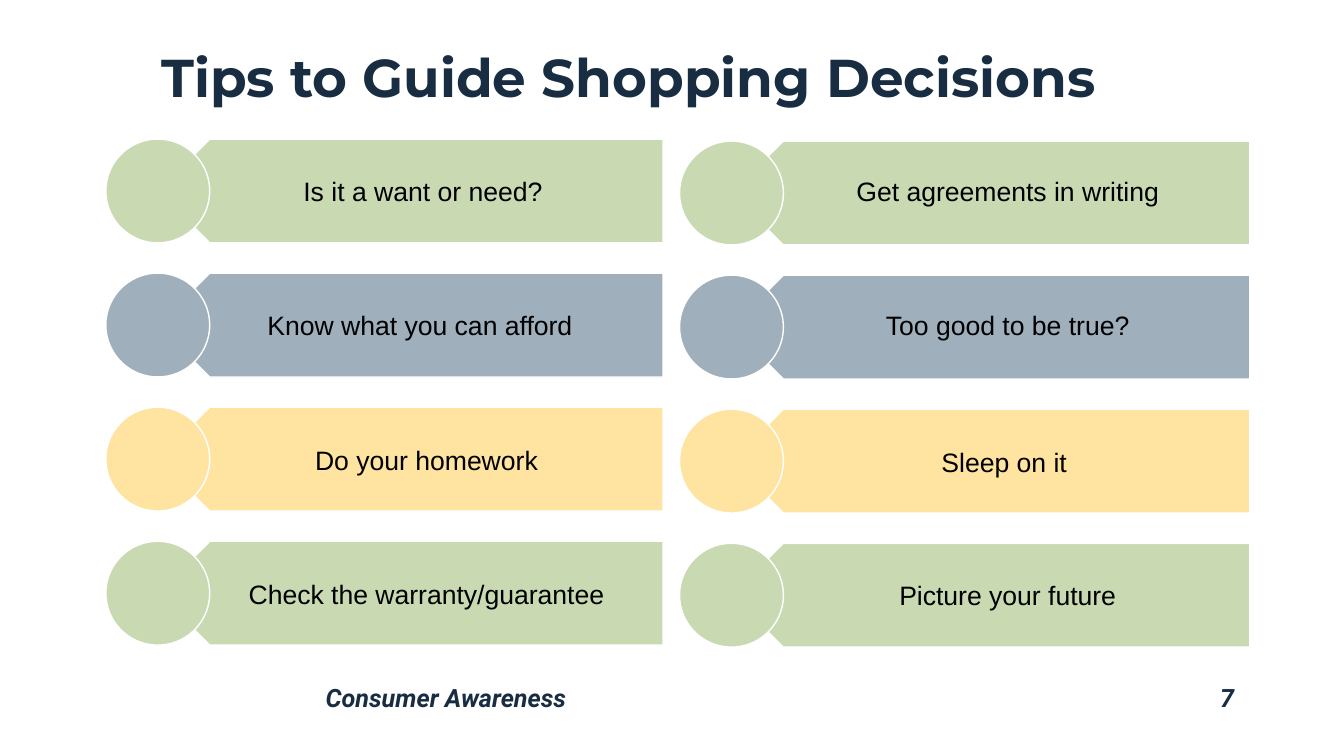
from dataclasses import dataclass

from pptx import Presentation
from pptx import util as u
from pptx.dml.color import RGBColor
from pptx.enum import shapes, text


@dataclass(frozen=True)
class Theme:
    navy: str = "182C42"
    black: str = "000000"
    white: str = "FFFFFF"
    green: str = "C9DAB3"
    blue: str = "9FAFBB"
    yellow: str = "FEE3A1"
    title_font: str = "Montserrat"
    footer_font: str = "Roboto"
    tip_font: str = "Arial"
    title_size: int = 38
    footer_size: int = 18
    tip_size: int = 19


THEME = Theme()
ROW_COLORS = (THEME.green, THEME.blue, THEME.yellow, THEME.green)
BAR_HEIGHT = 1.03
ROW_STEP = 1.33

# Per column: circle left, first top, banner width, tips with their text areas
COLUMNS = (
    (1.05, 1.38, 5.01, (
        ("Is it a want or need?", (1.83, 1.52, 4.73, 0.78)),
        ("Know what you can afford", (1.8, 2.85, 4.73, 0.79)),
        ("Do your homework", (1.9, 4.19, 4.66, 0.79)),
        ("Check the warranty/guarantee", (1.9, 5.51, 4.66, 0.81)),
    )),
    (6.74, 1.4, 5.14, (
        ("Get agreements in writing", (7.58, 1.4, 4.83, 1.03)),
        ("Too good to be true?", (7.58, 2.7, 4.83, 1.09)),
        ("Sleep on it", (7.58, 4.06, 4.76, 1.09)),
        ("Picture your future", (7.58, 5.4, 4.83, 1.05)),
    )),
)


def place(shape, box):
    shape.left, shape.top, shape.width, shape.height = map(u.Inches, box)


def write(shape, words, font, size, color, align=text.PP_ALIGN.LEFT,
          anchor=text.MSO_ANCHOR.TOP, bold=False, italic=False):
    frame = shape.text_frame
    frame.word_wrap = True
    frame.auto_size = text.MSO_AUTO_SIZE.NONE
    frame.vertical_anchor = anchor
    paragraph = frame.paragraphs[0]
    paragraph.alignment = align
    paragraph.line_spacing = 0.9
    paragraph.space_before = u.Pt(0)
    run = paragraph.add_run()
    run.text = words
    run.font.name = font
    run.font.size = u.Pt(size)
    run.font.bold = bold
    run.font.italic = italic
    run.font.color.rgb = RGBColor.from_string(color)


def add_text(slide, box, words, *style, **options):
    write(slide.shapes.add_textbox(*map(u.Inches, box)), words, *style, **options)


def add_filled_shape(slide, kind, box, color):
    shape = slide.shapes.add_shape(kind, *map(u.Inches, box))
    shape.shadow.inherit = False
    shape.fill.solid()
    shape.fill.fore_color.rgb = RGBColor.from_string(color)
    shape.line.color.rgb = RGBColor.from_string(THEME.white)
    shape.line.width = u.Pt(1)
    return shape


def add_tip(slide, left, top, banner_width, color, words, text_box):
    banner_box = (left + BAR_HEIGHT / 2, top, banner_width, BAR_HEIGHT)
    banner = add_filled_shape(slide, shapes.MSO_SHAPE.PENTAGON, banner_box, color)
    banner.rotation = 180
    circle_box = (left, top, BAR_HEIGHT, BAR_HEIGHT)
    add_filled_shape(slide, shapes.MSO_SHAPE.OVAL, circle_box, color)
    add_text(slide, text_box, words, THEME.tip_font, THEME.tip_size, THEME.black,
             align=text.PP_ALIGN.CENTER, anchor=text.MSO_ANCHOR.MIDDLE)


def main():
    presentation = Presentation()
    presentation.slide_width = u.Inches(13.33)
    presentation.slide_height = u.Inches(7.5)
    slide = presentation.slides.add_slide(presentation.slide_layouts[0])

    # Title
    title = slide.shapes.title
    place(title, (1.5, 0.11, 10.84, 1.02))
    write(title, "Tips to Guide Shopping Decisions", THEME.title_font,
          THEME.title_size, THEME.navy, anchor=text.MSO_ANCHOR.BOTTOM, bold=True)

    # Two columns of tips
    for left, first_top, banner_width, tips in COLUMNS:
        for row, (words, text_box) in enumerate(tips):
            add_tip(slide, left, first_top + row * ROW_STEP, banner_width,
                    ROW_COLORS[row], words, text_box)

    # Footer
    footer_style = (THEME.footer_font, THEME.footer_size, THEME.navy)
    subtitle = slide.placeholders[1]
    place(subtitle, (3.13, 6.75, 7.63, 0.38))
    write(subtitle, "Consumer Awareness", *footer_style, bold=True, italic=True)
    add_text(slide, (10.76, 6.75, 1.58, 0.38), "7", *footer_style,
             align=text.PP_ALIGN.RIGHT, bold=True, italic=True)

    presentation.save("out.pptx")


if __name__ == "__main__":
    main()
